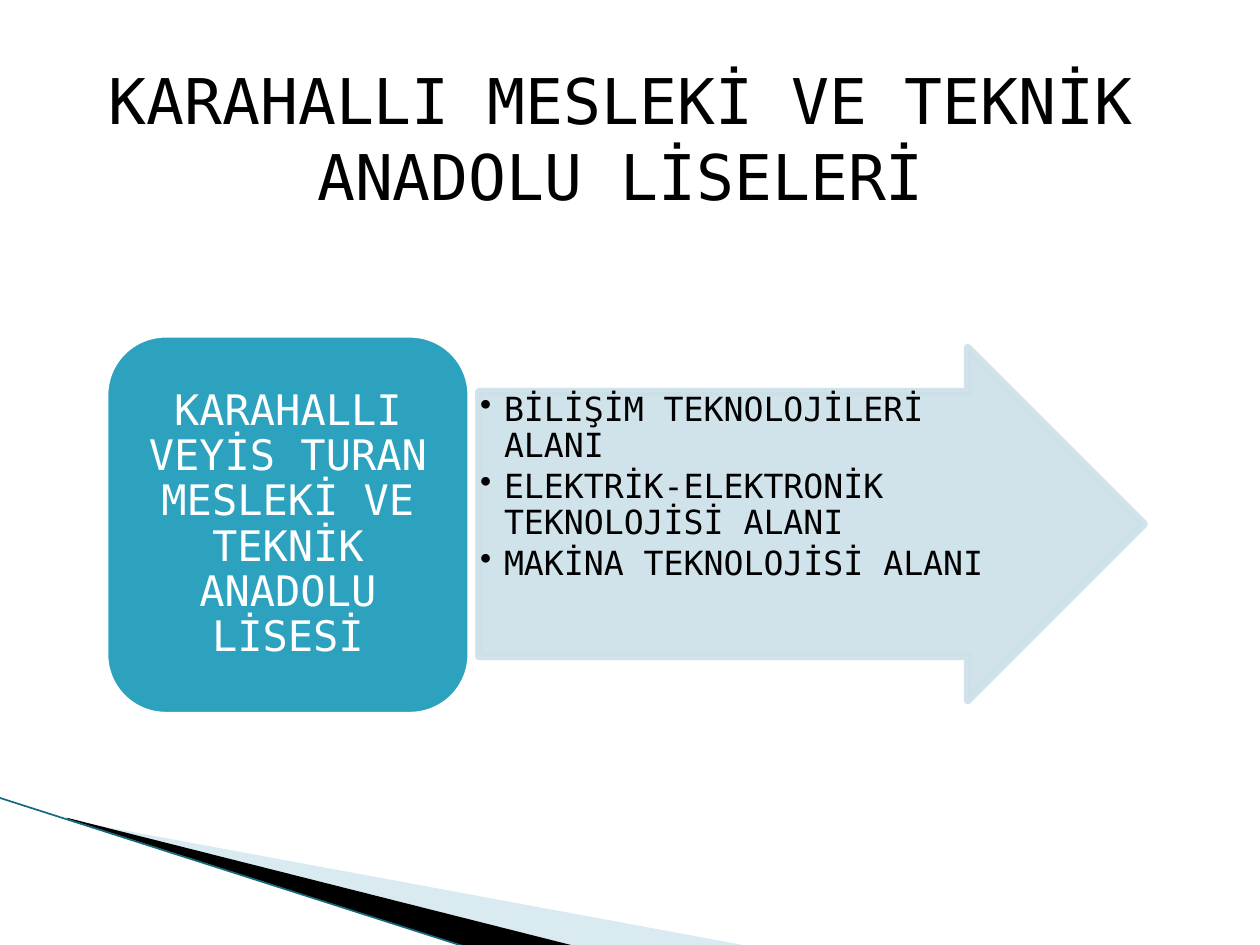
import pptx
import pptx.util
import pptx.dml.color
import pptx.enum.shapes
import pptx.enum.text
from lxml import etree
from pptx.oxml.ns import qn
from pptx.util import Inches, Pt

FONT = "DejaVu Sans Mono"
COLORS = {
    "wedge": "A0CBDC",
    "black": "000000",
    "edge": "16697A",
    "arrow": "CDE0E8",
    "school": "2DA2BF",
    "white": "FFFFFF",
}
FIELDS = [
    "BİLİŞİM TEKNOLOJİLERİ ALANI",
    "ELEKTRİK-ELEKTRONİK TEKNOLOJİSİ ALANI",
    "MAKİNA TEKNOLOJİSİ ALANI",
]


def paint(fmt, color, alpha=100):
    """Give a fill a solid colour with an opacity in percent."""
    fmt.solid()
    fmt.fore_color.rgb = pptx.dml.color.RGBColor.from_string(COLORS[color])
    if alpha < 100:
        for clr in fmt._xPr.iter(qn("a:srgbClr")):
            etree.SubElement(clr, qn("a:alpha"), val=str(alpha * 1000))


def style(p, size, color, align):
    p.alignment = align
    for r in p.runs:
        r.font.name = FONT
        r.font.size = Pt(size)
        r.font.color.rgb = pptx.dml.color.RGBColor.from_string(COLORS[color])


CENTER = pptx.enum.text.PP_ALIGN.CENTER
LEFT = pptx.enum.text.PP_ALIGN.LEFT
SHAPE = pptx.enum.shapes.MSO_SHAPE

prs = pptx.Presentation()
prs.slide_width, prs.slide_height = Inches(10), Inches(7.5)
s = prs.slides.add_slide(prs.slide_layouts[5])

# Corner decoration
wedges = [
    ("wedge", 40, [(0.55, 6.51), (5.95, 7.51), (4.56, 7.51), (0.55, 6.5)]),
    ("black", 100, [(0.53, 6.49), (4.57, 7.51), (3.72, 7.52), (0.54, 6.5)]),
]
for color, alpha, points in wedges:
    points = [(Inches(x), Inches(y)) for x, y in points]
    fb = s.shapes.build_freeform(*points[0])
    fb.add_line_segments(points[1:])
    sp = fb.convert_to_shape()
    sp.shadow.inherit = False
    paint(sp.fill, color, alpha)
    sp.line.fill.background()

edge = s.shapes.add_connector(
    pptx.enum.shapes.MSO_CONNECTOR.STRAIGHT,
    Inches(-0.01), Inches(6.33), Inches(3.71), Inches(7.52))
edge.line.width = Pt(0.95)
paint(edge.line.fill, "edge")
etree.SubElement(edge._element.spPr, qn("a:effectLst"))

# Arrow with the fields of study
arrow = s.shapes.add_shape(SHAPE.RIGHT_ARROW, Inches(3.8), Inches(2.76),
                           Inches(5.28), Inches(2.8))
arrow.adjustments[0] = 0.75
arrow.shadow.inherit = False
paint(arrow.fill, "arrow", 90)
arrow.line.width = Pt(4.33)
paint(arrow.line.fill, "arrow", 90)
etree.SubElement(arrow.line._ln, qn("a:round"))
tf = arrow.text_frame
tf.word_wrap = True
tf.vertical_anchor = pptx.enum.text.MSO_ANCHOR.TOP
tf.margin_left = tf.margin_right = tf.margin_top = tf.margin_bottom = Inches(0.01)
tf.text = "\n".join(FIELDS)
for p in tf.paragraphs:
    pPr = p._p.get_or_add_pPr()
    pPr.set("marL", str(Inches(0.19)))
    pPr.set("indent", str(-Inches(0.19)))
    etree.SubElement(pPr, qn("a:buChar"), char="•")
    p.line_spacing = 0.9
    p.space_after = Pt(2.85)
    style(p, 19, "black", LEFT)

# School
school = s.shapes.add_shape(SHAPE.ROUNDED_RECTANGLE, Inches(0.83), Inches(2.65),
                            Inches(2.91), Inches(3.03))
school.shadow.inherit = False
paint(school.fill, "school")
school.line.width = Pt(4.33)
paint(school.line.fill, "white")
tf = school.text_frame
tf.word_wrap = True
tf.vertical_anchor = pptx.enum.text.MSO_ANCHOR.MIDDLE
tf.text = "KARAHALLI VEYİS TURAN MESLEKİ VE TEKNİK ANADOLU LİSESİ"
tf.paragraphs[0].line_spacing = 0.9
style(tf.paragraphs[0], 24, "white", CENTER)

# Title
title = s.shapes.title
title.left, title.top = Inches(0.75), Inches(0.44)
title.width, title.height = Inches(8.35), Inches(1.31)
tf = title.text_frame
tf.word_wrap = True
tf.auto_size = pptx.enum.text.MSO_AUTO_SIZE.SHAPE_TO_FIT_TEXT
tf.vertical_anchor = pptx.enum.text.MSO_ANCHOR.TOP
tf.text = "KARAHALLI MESLEKİ VE TEKNİK ANADOLU LİSELERİ"
style(tf.paragraphs[0], 36, "black", CENTER)

prs.save("out.pptx")
